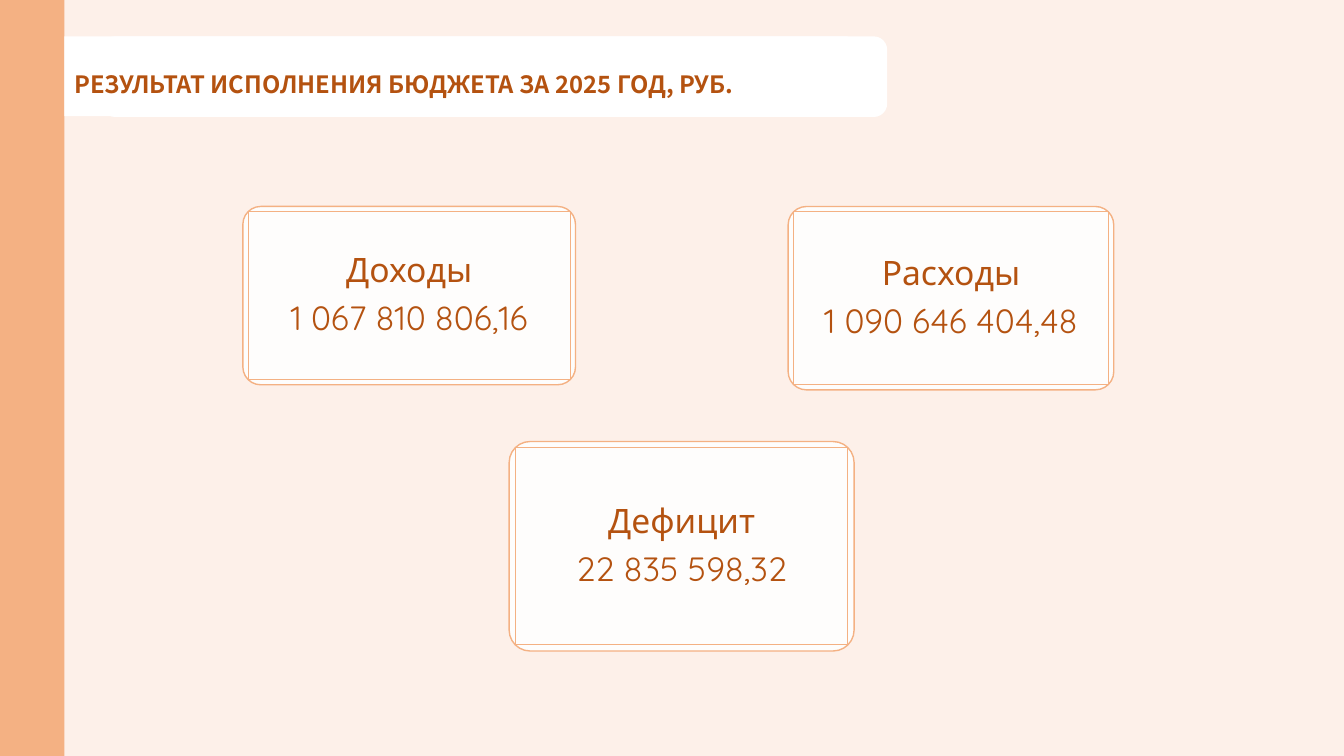
from lxml import etree
from pptx import Presentation
from pptx.dml.color import RGBColor
from pptx.enum import shapes, text
from pptx.oxml import ns
from pptx.util import Pt

# Content: label, amount, (left, top, width, height) in points
TITLE = "РЕЗУЛЬТАТ ИСПОЛНЕНИЯ БЮДЖЕТА ЗА 2025 ГОД, РУБ."
CARDS = [
    ("Доходы", "1 067 810 806,16", (173.5, 147.5, 237.6, 127.4)),
    ("Расходы", "1 090 646 404,48", (563, 147.5, 232.6, 131)),
    ("Дефицит", "22 835 598,32", (363.7, 315.4, 246.4, 149.6)),
]

# Colours and formats
ORANGE = RGBColor(0xF4, 0xB1, 0x83)
BROWN = RGBColor(0xB4, 0x52, 0x10)
WHITE = RGBColor(0xFF, 0xFF, 0xFF)
CREAM = RGBColor(0xFD, 0xF0, 0xE9)
RECT = shapes.MSO_SHAPE.RECTANGLE
ROUND = shapes.MSO_SHAPE.ROUNDED_RECTANGLE
TITLE_FONT = {"name": "Noto Sans CJK JP", "size": Pt(17), "bold": True}
CARD_FONT = {"name": "Quicksand", "size": Pt(24)}
TITLE_PARA = {"alignment": text.PP_ALIGN.LEFT, "line_spacing": 2.0}
CARD_PARA = {"alignment": text.PP_ALIGN.CENTER, "line_spacing": 0.9,
             "space_after": Pt(8.4)}
CARD_FRAME = {"vertical_anchor": text.MSO_ANCHOR.MIDDLE}
CARD_FRAME.update({f"margin_{side}": Pt(13)
                   for side in ("left", "top", "right", "bottom")})
CORNER = 0.1
CORNER_INSET = 0.29  # share of the corner radius left outside the text frame


def add_box(parent, kind, box, fill=None, line=None):
    sp = parent.add_shape(kind, *map(Pt, box))
    sp.shadow.inherit = False
    if fill is None:
        sp.fill.background()
    else:
        sp.fill.solid()
        sp.fill.fore_color.rgb = fill
    if line is None:
        sp.line.fill.background()
    else:
        sp.line.color.rgb = ORANGE
        sp.line.width = Pt(line)
    return sp


def set_all(target, values):
    for name, value in values.items():
        setattr(target, name, value)


def write(sp, lines, font, para, frame):
    tf = sp.text_frame
    tf.word_wrap = True
    set_all(tf, frame)
    for i, line in enumerate(lines):
        p = tf.add_paragraph() if i else tf.paragraphs[0]
        set_all(p, para)
        r = p.add_run()
        r.text = line
        set_all(r.font, font)
        r.font.color.rgb = BROWN


prs = Presentation()
prs.slide_width, prs.slide_height = Pt(960), Pt(540)
s = prs.slides.add_slide(prs.slide_layouts[6])
s.background.fill.solid()
s.background.fill.fore_color.rgb = CREAM

# Side band and title
add_box(s.shapes, RECT, (0, 0, 46, 540), ORANGE)
add_box(s.shapes, ROUND, (72.7, 26, 561, 57.6), WHITE)
title = add_box(s.shapes, RECT, (46, 26, 559.5, 57), WHITE)
write(title, [TITLE], TITLE_FONT, TITLE_PARA,
      {"vertical_anchor": text.MSO_ANCHOR.TOP})

# Budget cards: rounded panel with a thin text frame inside its corners
for label, amount, (left, top, width, height) in CARDS:
    card = s.shapes.add_group_shape().shapes
    panel = add_box(card, ROUND, (left, top, width, height), WHITE, 1)
    panel.adjustments[0] = CORNER
    color = panel.fill._xPr.find(".//" + ns.qn("a:srgbClr"))
    etree.SubElement(color, ns.qn("a:alpha"), val="90000")
    inset = CORNER * min(width, height) * CORNER_INSET
    frame = add_box(card, RECT, (left + inset, top + inset,
                                 width - 2 * inset, height - 2 * inset),
                    line=0.75)
    write(frame, [label, amount], CARD_FONT, CARD_PARA, CARD_FRAME)

prs.save("out.pptx")
